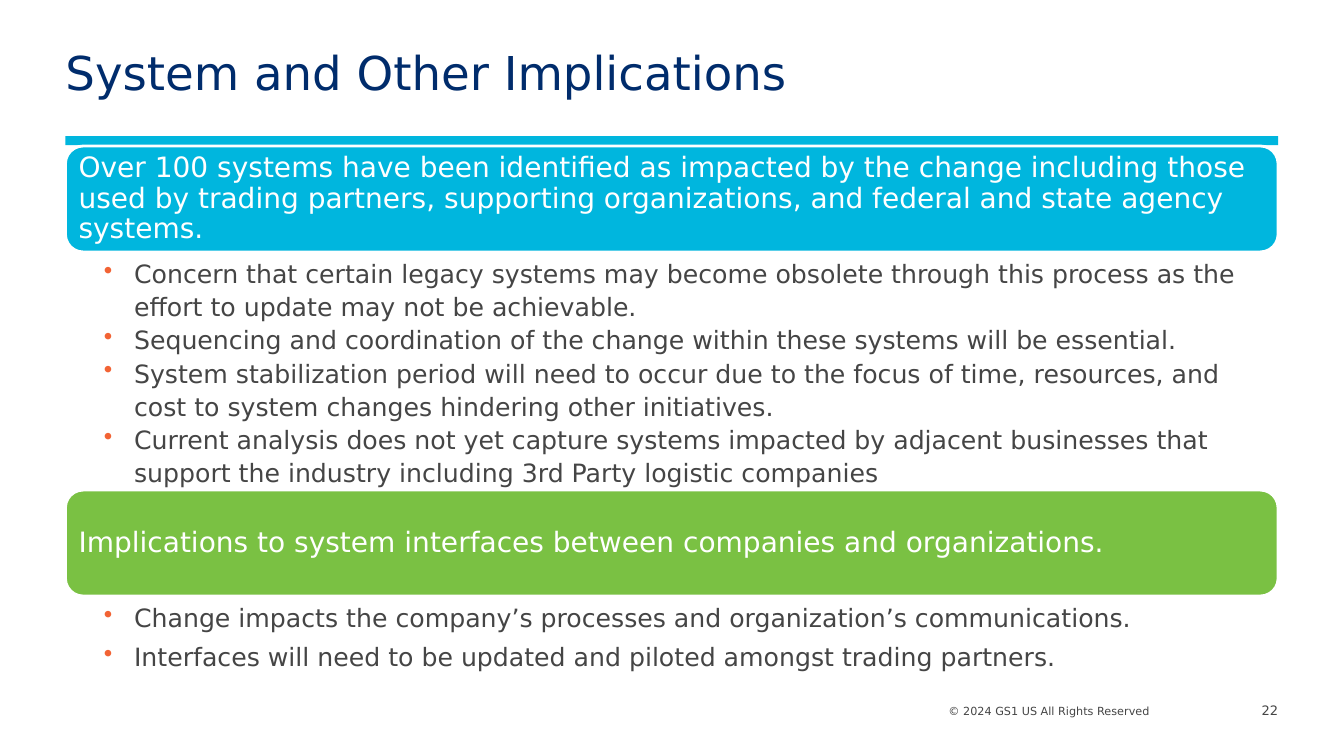
from lxml.etree import SubElement
from pptx import Presentation
from pptx.dml.color import RGBColor
from pptx.enum.shapes import MSO_SHAPE as Shape
from pptx.enum.text import MSO_ANCHOR as Anchor, PP_ALIGN as Align
from pptx.oxml.ns import qn
from pptx.util import Cm, Pt

NAVY = RGBColor(0x00, 0x2C, 0x6C)
CYAN = RGBColor(0x00, 0xB6, 0xDE)
GREEN = RGBColor(0x7A, 0xC1, 0x43)
ORANGE = RGBColor(0xF2, 0x63, 0x34)
GREY = RGBColor(0x45, 0x45, 0x45)
WHITE = RGBColor(0xFF, 0xFF, 0xFF)
FONT = "DejaVu Sans"

TITLE = "System and Other Implications"
COPYRIGHT = "© 2024 GS1 US All Rights Reserved"
PAGE_NUMBER = "22"
SECTIONS = [
    {
        "heading": "Over 100 systems have been identified as impacted by the change including "
                   "those used by trading partners, supporting organizations, and federal and "
                   "state agency systems.",
        "color": CYAN,
        "points": [
            "Concern that certain legacy systems may become obsolete through this process as "
            "the effort to update may not be achievable.",
            "Sequencing and coordination of the change within these systems will be essential.",
            "System stabilization period will need to occur due to the focus of time, "
            "resources, and cost to system changes hindering other initiatives.",
            "Current analysis does not yet capture systems impacted by adjacent businesses "
            "that support the industry including 3rd Party logistic companies",
        ],
        "points_height": 6,
        "gap": 0,
    },
    {
        "heading": "Implications to system interfaces between companies and organizations.",
        "color": GREEN,
        "points": [
            "Change impacts the company’s processes and organization’s communications.",
            "Interfaces will need to be updated and piloted amongst trading partners.",
        ],
        "points_height": 1.65,
        "gap": 4,
    },
]

# Lengths in centimetres
LEFT, WIDTH = 1.65, 30.56
RULE_TOP, RULE_HEIGHT = 3.43, 0.23
SECTIONS_TOP, BANNER_HEIGHT = 3.68, 2.67
BULLET_INDENT = 0.76

presentation = Presentation()
presentation.slide_width, presentation.slide_height = Cm(33.87), Cm(19.05)
slide = presentation.slides.add_slide(presentation.slide_layouts[6])


def set_all(target, values):
    for name, value in values.items():
        setattr(target, name, value)


def add_bullet(paragraph):
    properties = paragraph._p.get_or_add_pPr()
    properties.set("marL", str(Cm(BULLET_INDENT)))
    properties.set("indent", str(-Cm(BULLET_INDENT)))
    color = SubElement(properties, qn("a:buClr"))
    SubElement(color, qn("a:srgbClr")).set("val", str(ORANGE))
    SubElement(properties, qn("a:buChar")).set("char", "•")


def write(shape, lines, size, color, insets=(0, 0, 0, 0), anchor=Anchor.MIDDLE,
          bullets=False, gap=0, **paragraph_format):
    """Fill a shape with paragraphs; insets run left, top, right, bottom in cm."""
    frame = shape.text_frame
    sides = ("margin_left", "margin_top", "margin_right", "margin_bottom")
    set_all(frame, dict(zip(sides, map(Cm, insets))))
    set_all(frame, {"word_wrap": True, "vertical_anchor": anchor})
    for index, line in enumerate(lines):
        paragraph = frame.add_paragraph() if index else frame.paragraphs[0]
        if bullets:
            add_bullet(paragraph)
        set_all(paragraph, {"alignment": Align.LEFT, "space_before": Pt(gap if index else 0),
                            **paragraph_format})
        run = paragraph.add_run()
        run.text = line
        set_all(run.font, {"name": FONT, "size": Pt(size)})
        run.font.color.rgb = color


def add_text(box, *args, **options):
    write(slide.shapes.add_textbox(*map(Cm, box)), *args, **options)


def add_block(kind, box, color):
    block = slide.shapes.add_shape(kind, *map(Cm, box))
    block.shadow.inherit = False
    block.fill.solid()
    block.fill.fore_color.rgb = color
    block.line.fill.background()
    return block


add_text((20.88, 17.75, 8.1, 0.53), [COPYRIGHT], 8, GREY, anchor=Anchor.TOP,
         alignment=Align.RIGHT)
add_block(Shape.RECTANGLE, (LEFT, RULE_TOP, WIDTH, RULE_HEIGHT), CYAN)
add_text((LEFT, 0.64, 28.02, 2.51), [TITLE], 33.3, NAVY, (0, 0.13, 0.25, 0.13),
         line_spacing=0.9)

top = SECTIONS_TOP
for section in SECTIONS:
    banner = add_block(Shape.ROUNDED_RECTANGLE, (LEFT, top, WIDTH, BANNER_HEIGHT),
                       section["color"])
    banner.line.color.rgb = WHITE
    banner.line.width = Pt(2)
    write(banner, [section["heading"]], 20, WHITE, (0.2, 0.2, 0.2, 0.2), line_spacing=0.9)
    top += BANNER_HEIGHT
    add_text((LEFT, top, WIDTH, section["points_height"]), section["points"], 18, GREY,
             (0.97, 0.08, 0.36, 0.08), Anchor.TOP, bullets=True, gap=section["gap"],
             line_spacing=1.1)
    top += section["points_height"]

add_text((31.29, 17.63, 0.92, 0.56), [PAGE_NUMBER], 9.3, GREY, alignment=Align.RIGHT)

presentation.save("out.pptx")
